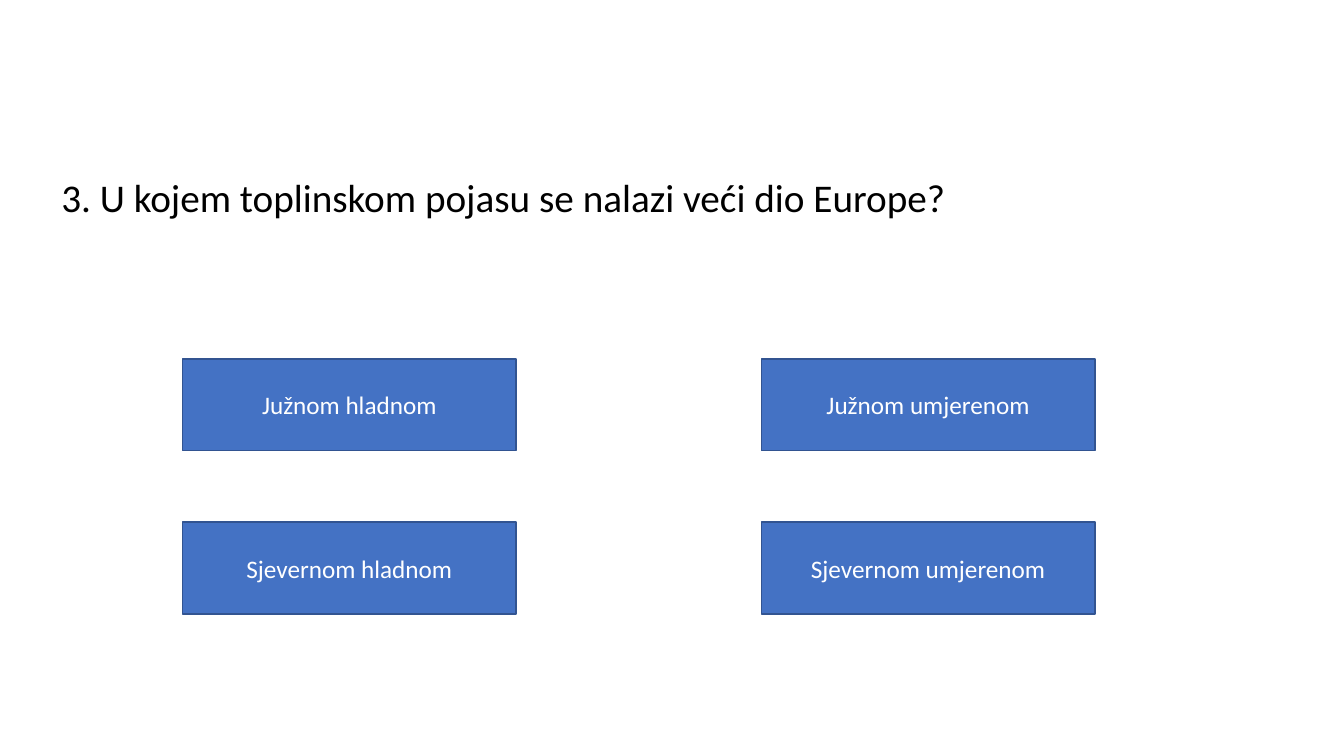
"""Build a quiz slide with one question and four answer boxes."""
from pptx import Presentation
from pptx import util as u
from pptx.dml import color
from pptx.enum import shapes, text

COLORS = {"question": "000000", "box": "4472C4", "border": "325491", "answer": "FFFFFF"}
FONT = "Calibri"
ANSWERS = [
    ["Južnom hladnom", "Južnom umjerenom"],
    ["Sjevernom hladnom", "Sjevernom umjerenom"],
]
LEFT, TOP = 1.81, 3.56
COLUMN_STEP, ROW_STEP = 5.74, 1.62
BOX_WIDTH, BOX_HEIGHT = 3.31, 0.91


def rgb(name):
    """Return the named colour."""
    return color.RGBColor.from_string(COLORS[name])


def write_text(shape, content, *, size, fill, align=text.PP_ALIGN.LEFT,
               anchor=text.MSO_ANCHOR.TOP):
    """Put formatted text into a shape."""
    frame = shape.text_frame
    frame.word_wrap = True
    frame.vertical_anchor = anchor
    paragraph = frame.paragraphs[0]
    paragraph.alignment = align
    run = paragraph.add_run()
    run.text = content
    run.font.name = FONT
    run.font.size = u.Pt(size)
    run.font.color.rgb = rgb(fill)


def add_question(slide, content):
    """Add the question line."""
    shape = slide.shapes.add_textbox(
        u.Inches(0.51), u.Inches(1.67), u.Inches(12.46), u.Inches(0.57))
    write_text(shape, content, size=28, fill="question")
    shape.text_frame.auto_size = text.MSO_AUTO_SIZE.SHAPE_TO_FIT_TEXT


def add_answer(slide, content, left, top):
    """Add one answer box."""
    shape = slide.shapes.add_shape(
        shapes.MSO_SHAPE.RECTANGLE, u.Inches(left), u.Inches(top),
        u.Inches(BOX_WIDTH), u.Inches(BOX_HEIGHT))
    shape.shadow.inherit = False
    shape.fill.solid()
    shape.fill.fore_color.rgb = rgb("box")
    shape.line.color.rgb = rgb("border")
    shape.line.width = u.Pt(1)
    write_text(shape, content, size=18, fill="answer",
               align=text.PP_ALIGN.CENTER, anchor=text.MSO_ANCHOR.MIDDLE)


def main():
    """Build and save the presentation."""
    presentation = Presentation()
    presentation.slide_width = u.Inches(13.33)
    presentation.slide_height = u.Inches(7.5)
    slide = presentation.slides.add_slide(presentation.slide_layouts[6])
    add_question(slide, "3. U kojem toplinskom pojasu se nalazi veći dio Europe?")
    for row, answers in enumerate(ANSWERS):
        for column, answer in enumerate(answers):
            add_answer(slide, answer, LEFT + column * COLUMN_STEP, TOP + row * ROW_STEP)
    presentation.save("out.pptx")


if __name__ == "__main__":
    main()
